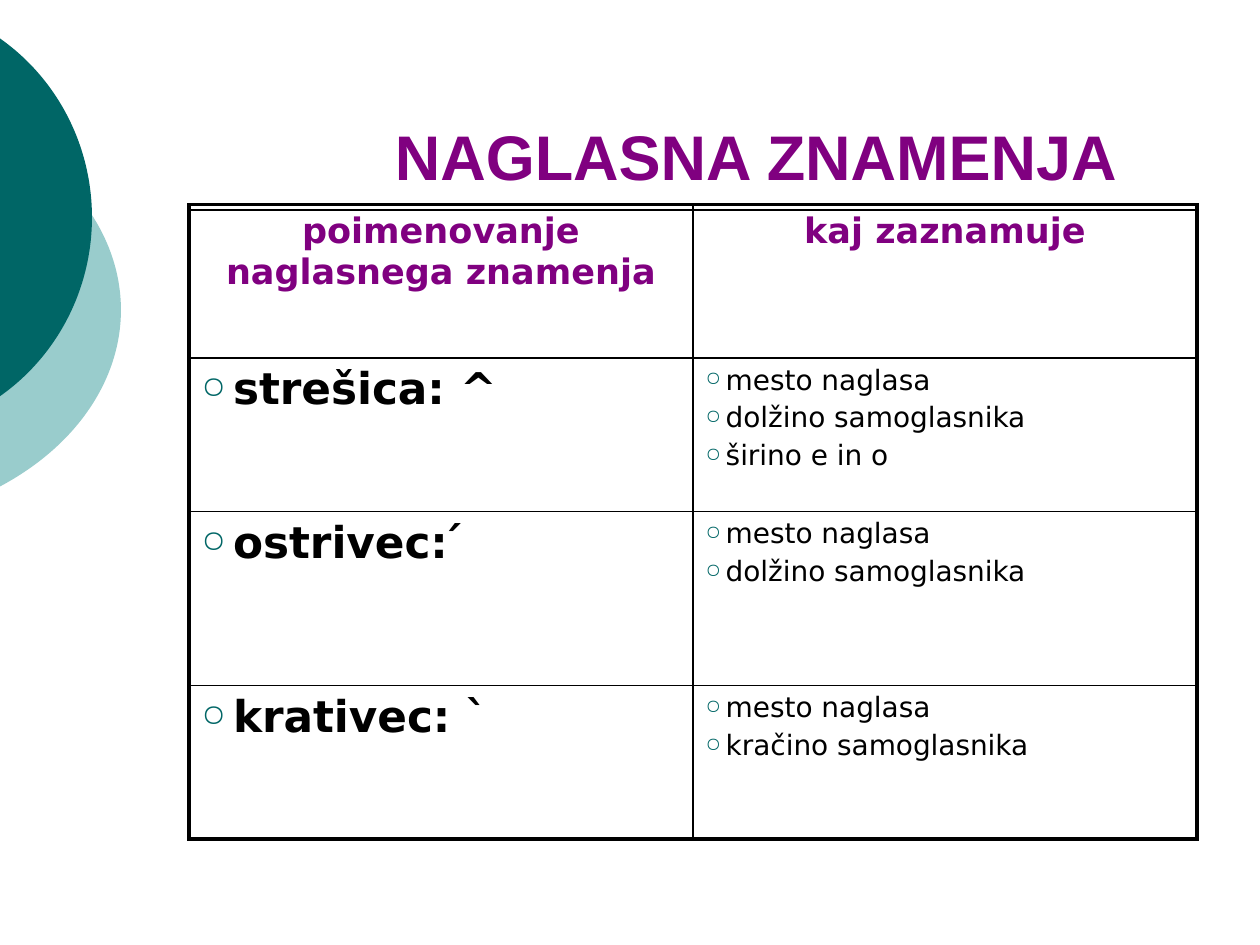
import pptx
import pptx.dml.color
import pptx.enum.shapes
import pptx.enum.text
import pptx.oxml
import pptx.oxml.ns
import pptx.util
from typing import NamedTuple

RGB = pptx.dml.color.RGBColor
ALIGN = pptx.enum.text.PP_ALIGN
ANCHOR = pptx.enum.text.MSO_ANCHOR

BLACK = RGB(0x00, 0x00, 0x00)
PURPLE = RGB(0x80, 0x00, 0x80)
TEAL = RGB(0x00, 0x66, 0x66)
PALE = RGB(0x99, 0xCC, 0xCC)
WIDE, HIGH = pptx.util.Inches(10), pptx.util.Inches(7.5)
COLS, ROWS = 20, 15
THICK, THIN = 2.25, 1


class Style(NamedTuple):
    size: float
    bold: bool
    color: RGB
    font: str = "DejaVu Sans"
    indent: float = 0


class Disc(NamedTuple):
    left: float
    top: float
    wide: float
    high: float
    color: RGB


class Mark(NamedTuple):
    name: str
    roles: tuple
    high: float


TITLE = Style(36, True, PURPLE, "Arial")
HEAD = Style(20, True, PURPLE)
NAME = Style(25, True, BLACK, indent=0.25)
ROLE = Style(16, False, BLACK, indent=0.16)
DISCS = (
    Disc(-7.08, 1.5, 9, 6.84, PALE),
    Disc(-5.3, 0, 6.76, 6.9, TEAL),
)
HEADS = ("poimenovanje naglasnega znamenja", "kaj zaznamuje")
TOP = 2.43
MARKS = (
    Mark("strešica: ^", ("mesto naglasa", "dolžino samoglasnika", "širino e in o"), 2.44),
    Mark("ostrivec: ́", ("mesto naglasa", "dolžino samoglasnika"), 2.76),
    Mark("krativec: `", ("mesto naglasa", "kračino samoglasnika"), 2.44),
)


def across(cols: float) -> int:
    return round(WIDE * cols / COLS)


def down(rows: float) -> int:
    return round(HIGH * rows / ROWS)


def add_xml(home, xml: str, spot: int) -> None:
    space = pptx.oxml.ns.nsdecls("a")
    home.insert(spot, pptx.oxml.parse_xml(xml.replace(">", f" {space}>", 1)))


def draw_disc(slide, disc: Disc) -> None:
    box = (across(disc.left), down(disc.top), across(disc.wide), down(disc.high))
    shape = slide.shapes.add_shape(pptx.enum.shapes.MSO_SHAPE.OVAL, *box)
    shape.shadow.inherit = False
    shape.fill.solid()
    shape.fill.fore_color.rgb = disc.color
    shape.line.fill.background()


def add_bullet(para, indent: float) -> None:
    prop = para._p.get_or_add_pPr()
    gap = pptx.util.Inches(indent)
    prop.set("marL", str(gap))
    prop.set("indent", str(-gap))
    bits = (
        f'<a:buClr><a:srgbClr val="{TEAL}"/></a:buClr>',
        '<a:buSzPct val="70000"></a:buSzPct>',
        '<a:buFont typeface="OpenSymbol"></a:buFont>',
        '<a:buChar char="○"></a:buChar>',
    )
    for bit in bits:
        add_xml(prop, bit, len(prop))


def write(frame, lines: tuple, style: Style) -> None:
    frame.word_wrap = True
    frame.text = "\n".join(lines)
    for i, para in enumerate(frame.paragraphs):
        if style.indent:
            add_bullet(para, style.indent)
        else:
            para.alignment = ALIGN.CENTER
        if i:
            para.space_before = pptx.util.Pt(style.size * 0.2)
        for run in para.runs:
            run.font.name = style.font
            run.font.size = pptx.util.Pt(style.size)
            run.font.bold = style.bold
            run.font.color.rgb = style.color


def draw_rule(slide, left: float, top: float, wide: float) -> None:
    kind = pptx.enum.shapes.MSO_CONNECTOR.STRAIGHT
    y = down(top)
    rule = slide.shapes.add_connector(kind, across(left), y, across(left + wide), y)
    rule.line.color.rgb = BLACK
    rule.line.width = pptx.util.Pt(THIN)
    props = rule._element.spPr
    add_xml(props, "<a:effectLst></a:effectLst>", len(props))


def add_edges(cell, row: int, col: int, last: int) -> None:
    outer = {"L": col == 0, "R": col == 1, "T": row == 0, "B": row == last}
    prop = cell._tc.get_or_add_tcPr()
    for spot, (side, thick) in enumerate(outer.items()):
        width = pptx.util.Pt(THICK if thick else THIN)
        fill = f'<a:solidFill><a:srgbClr val="{BLACK}"/></a:solidFill>'
        add_xml(prop, f"<a:ln{side} w='{width}'>{fill}</a:ln{side}>", spot)


def draw_table(slide, left: float, top: float, wide: float) -> None:
    highs = [TOP] + [mark.high for mark in MARKS]
    box = (across(left), down(top), across(wide), down(sum(highs)))
    table = slide.shapes.add_table(len(highs), 2, *box).table
    table.first_row = table.horz_banding = False
    for line, high in zip(table.rows, highs):
        line.height = down(high)
    rows = [[((head,), HEAD) for head in HEADS]]
    rows += [[((mark.name,), NAME), (mark.roles, ROLE)] for mark in MARKS]
    for r, row in enumerate(rows):
        for c, (lines, style) in enumerate(row):
            cell = table.cell(r, c)
            cell.fill.background()
            add_edges(cell, r, c, len(MARKS))
            write(cell.text_frame, lines, style)


def main() -> None:
    deck = pptx.Presentation()
    deck.slide_width, deck.slide_height = WIDE, HIGH
    slide = deck.slides.add_slide(deck.slide_layouts[6])
    for disc in DISCS:
        draw_disc(slide, disc)
    draw_rule(slide, 3, 3.33, 16)
    title = slide.shapes.add_textbox(across(4), down(0.66), across(16), down(2.5))
    title.text_frame.vertical_anchor = ANCHOR.BOTTOM
    write(title.text_frame, ("NAGLASNA ZNAMENJA",), TITLE)
    draw_table(slide, 3, 3.25, 16)
    deck.save("out.pptx")


if __name__ == "__main__":
    main()
